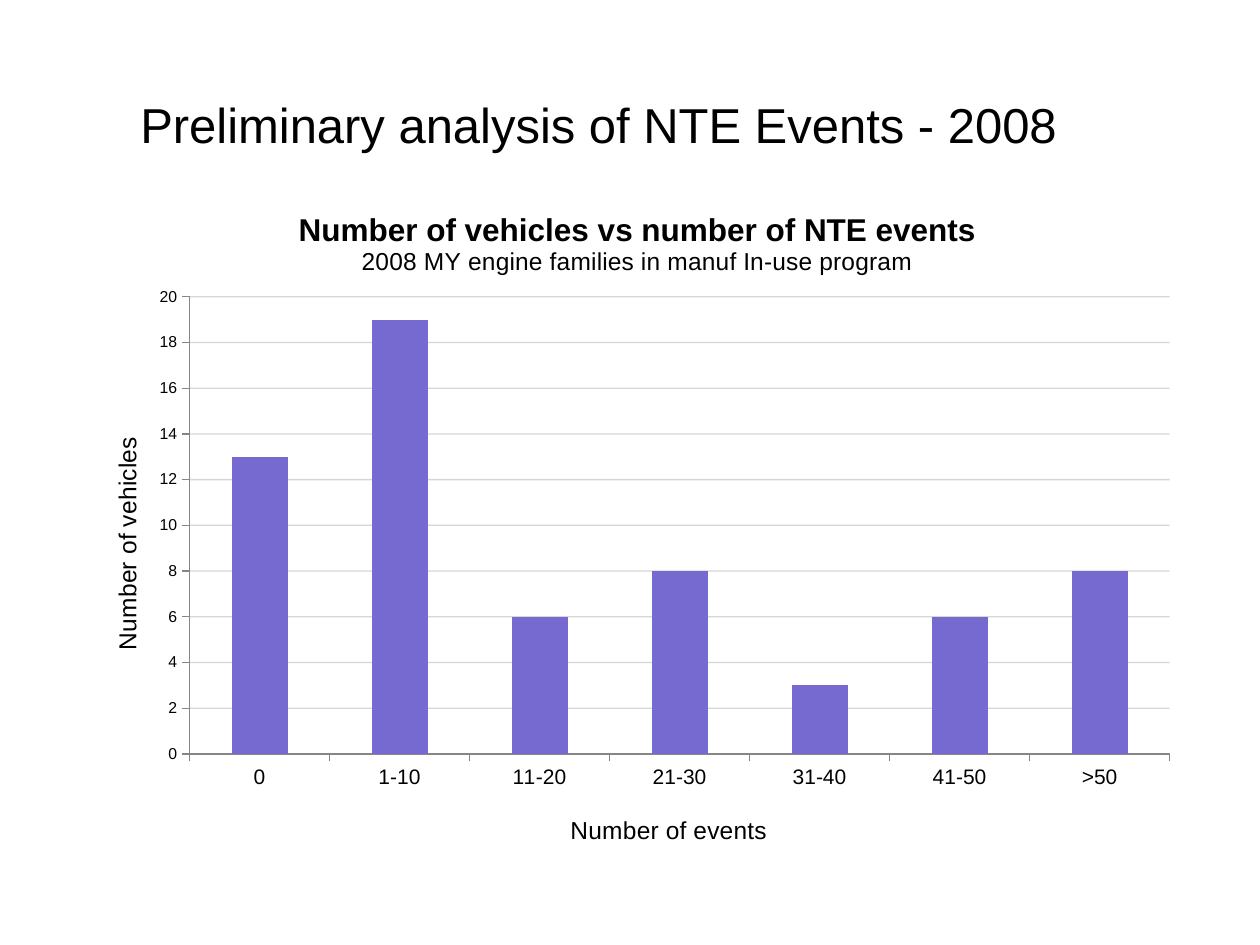
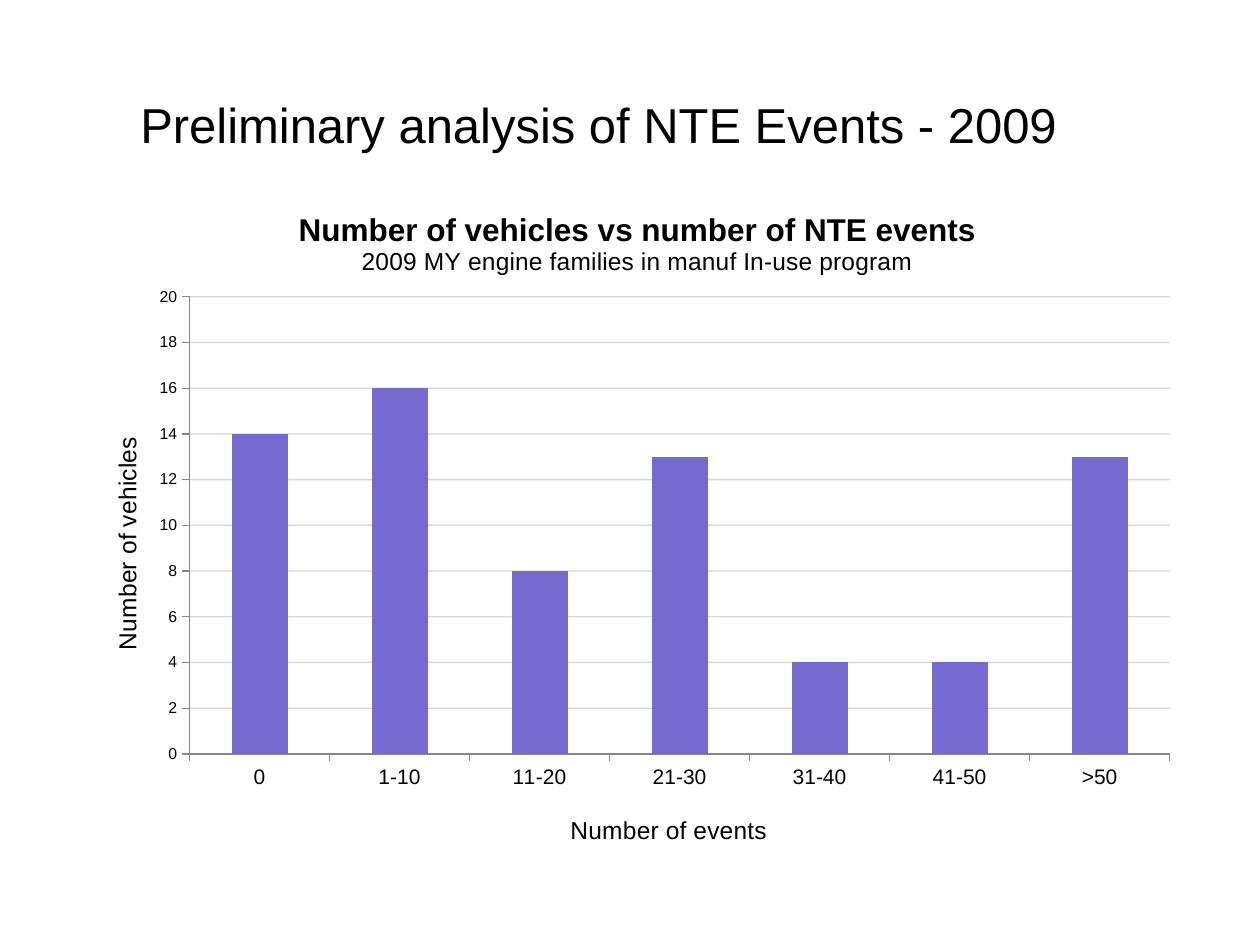
from lxml import etree
from pptx import Presentation
from pptx.chart.data import CategoryChartData
from pptx.dml.color import RGBColor
from pptx.enum.chart import XL_CHART_TYPE, XL_TICK_MARK
from pptx.enum.text import MSO_ANCHOR, PP_ALIGN
from pptx.oxml.ns import qn
from pptx.util import Inches, Pt

FONT = "Arial"
BLACK = RGBColor(0x00, 0x00, 0x00)
WHITE = RGBColor(0xFF, 0xFF, 0xFF)
PURPLE = RGBColor(0x76, 0x6A, 0xD0)
GRID_GREY = RGBColor(0xBF, 0xBF, 0xBF)
AXIS_GREY = RGBColor(0x86, 0x86, 0x86)

EVENT_RANGES = ["0", "1-10", "11-20", "21-30", "31-40", "41-50", ">50"]
VEHICLES_BY_YEAR = {
    2008: [13, 19, 6, 8, 3, 6, 8],
    2009: [14, 16, 8, 13, 4, 4, 13],
}


def add_run(paragraph, text, size, bold=False):
    run = paragraph.add_run()
    run.text = text
    run.font.name = FONT
    run.font.size = Pt(size)
    run.font.bold = bold
    run.font.color.rgb = BLACK


def set_layout(parent, position, **fractions):
    for old in parent.findall(qn("c:layout")):
        parent.remove(old)
    layout = etree.Element(qn("c:layout"))
    manual = etree.SubElement(layout, qn("c:manualLayout"))
    if "w" in fractions:
        etree.SubElement(manual, qn("c:layoutTarget"), val="inner")
    for side in "xy":
        etree.SubElement(manual, qn(f"c:{side}Mode"), val="edge")
    for key, fraction in fractions.items():
        etree.SubElement(manual, qn(f"c:{key}"), val=str(fraction))
    parent.insert(position, layout)


prs = Presentation()
prs.slide_width = Inches(10)
prs.slide_height = Inches(7.5)
title_only = prs.slide_layouts[5]

for year, vehicles in VEHICLES_BY_YEAR.items():
    slide = prs.slides.add_slide(title_only)
    slide.background.fill.solid()
    slide.background.fill.fore_color.rgb = WHITE

    heading = slide.shapes.title
    heading.left, heading.top = Inches(0.5), Inches(0.42)
    heading.width, heading.height = Inches(8.5), Inches(1.13)
    heading.text_frame.vertical_anchor = MSO_ANCHOR.MIDDLE
    heading_line = heading.text_frame.paragraphs[0]
    heading_line.alignment = PP_ALIGN.CENTER
    add_run(heading_line, f"Preliminary analysis of NTE Events - {year}", 28)

    data = CategoryChartData()
    data.categories = EVENT_RANGES
    data.add_series("Series 1", vehicles)
    chart = slide.shapes.add_chart(
        XL_CHART_TYPE.COLUMN_CLUSTERED,
        Inches(0.58), Inches(1.42), Inches(8.89), Inches(5.44), data,
    ).chart
    chart.has_legend = False
    chart.font.name = FONT
    chart.font.size = Pt(10)
    chart.font.color.rgb = BLACK

    caption = chart.chart_title.text_frame
    add_run(caption.paragraphs[0], "Number of vehicles vs number of NTE events", 18, True)
    add_run(caption.add_paragraph(), f"{year} MY engine families in manuf In-use program", 14)

    bars = chart.plots[0]
    bars.gap_width = 150
    bars.vary_by_categories = False
    bars.series[0].format.fill.solid()
    bars.series[0].format.fill.fore_color.rgb = PURPLE

    events, counts = chart.category_axis, chart.value_axis
    for axis, label, tick_size in (
        (events, "Number of events", 12),
        (counts, "Number of vehicles", 9),
    ):
        add_run(axis.axis_title.text_frame.paragraphs[0], label, 14)
        axis.tick_labels.font.size = Pt(tick_size)
        axis.major_tick_mark = XL_TICK_MARK.OUTSIDE
        axis.minor_tick_mark = XL_TICK_MARK.NONE
        axis.format.line.color.rgb = AXIS_GREY
        axis.format.line.width = Pt(0.75)

    counts.minimum_scale = 0
    counts.maximum_scale = 20
    counts.major_unit = 2
    counts.has_major_gridlines = True
    gridline = counts.major_gridlines.format.line
    gridline.color.rgb = GRID_GREY
    gridline.width = Pt(0.75)

    chart_xml = chart._chartSpace
    grid_color = chart_xml.xpath(".//c:majorGridlines//a:srgbClr")[0]
    etree.SubElement(grid_color, qn("a:alpha"), val="63000")
    counts_body = chart_xml.xpath(".//c:valAx/c:title//a:bodyPr")[0]
    counts_body.set("rot", "-5400000")
    counts_body.set("vert", "horz")

    set_layout(chart_xml.xpath(".//c:plotArea")[0], 0, x=0.104, y=0.172, w=0.875, h=0.667)
    set_layout(chart_xml.xpath("./c:chart/c:title")[0], 1, x=0.198, y=0.04)
    set_layout(chart_xml.xpath(".//c:catAx/c:title")[0], 1, x=0.44, y=0.92)
    set_layout(chart_xml.xpath(".//c:valAx/c:title")[0], 1, x=0.03, y=0.37)

prs.save("out.pptx")
